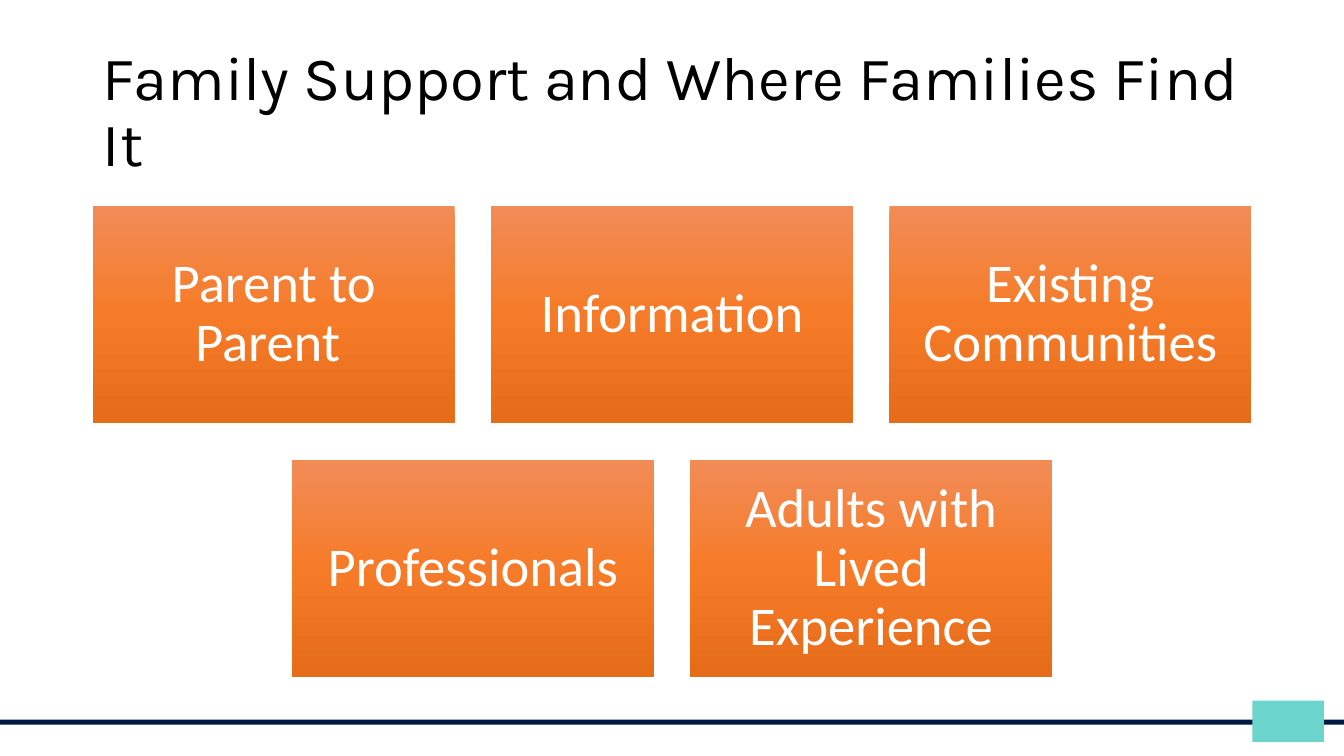
from copy import deepcopy

from pptx import Presentation
from pptx.dml.color import RGBColor
from pptx.enum.shapes import MSO_SHAPE
from pptx.enum.text import MSO_ANCHOR, MSO_AUTO_SIZE, PP_ALIGN
from pptx.oxml.ns import qn
from pptx.util import Inches, Pt

RECTANGLE = MSO_SHAPE.RECTANGLE
MIDDLE = MSO_ANCHOR.MIDDLE
NO_FIT = MSO_AUTO_SIZE.NONE
LEFT, CENTER = PP_ALIGN.LEFT, PP_ALIGN.CENTER

THEME = {
    "title": {"name": "Karla", "size": Pt(44), "color": "000000"},
    "card": {"name": "Calibri", "size": Pt(39), "color": "FFFFFF"},
    "gradient": [(0, "F18C57"), (0.5, "F67B28"), (1, "E56C19")],
    "stripe": "001744",
    "tab": "6BD4CD",
}

SLIDE_WIDTH, SLIDE_HEIGHT = 13.33, 7.5
GRID_LEFT, GRID_TOP = 0.92, 2.04
CARD_WIDTH, CARD_HEIGHT, GAP = 3.59, 2.16, 0.36
COLUMN_STEP, ROW_STEP = CARD_WIDTH + GAP, CARD_HEIGHT + GAP
CARD_ROWS = [
    ["Parent to Parent ", "Information", "Existing Communities"],
    ["Professionals", "Adults with Lived Experience"],
]


def add_rectangle(page, left, top, width, height):
    box = page.shapes.add_shape(
        RECTANGLE, Inches(left), Inches(top), Inches(width), Inches(height)
    )
    box.shadow.inherit = False
    box.line.fill.background()
    return box


def write_text(box, text, style, alignment, inset):
    frame = box.text_frame
    frame_format = {
        "word_wrap": True,
        "auto_size": NO_FIT,
        "vertical_anchor": MIDDLE,
        "margin_left": Inches(inset),
        "margin_right": Inches(inset),
        "margin_top": Inches(inset / 2 if alignment == LEFT else inset),
        "margin_bottom": Inches(inset / 2 if alignment == LEFT else inset),
    }
    for name, value in frame_format.items():
        setattr(frame, name, value)
    para = frame.paragraphs[0]
    para.alignment = alignment
    para.line_spacing = 0.9
    span = para.add_run()
    span.text = text
    for name in ("name", "size"):
        setattr(span.font, name, style[name])
    span.font.color.rgb = RGBColor.from_string(style["color"])


deck = Presentation()
deck.slide_width, deck.slide_height = Inches(SLIDE_WIDTH), Inches(SLIDE_HEIGHT)
page = deck.slides.add_slide(deck.slide_layouts[5])

bars = [
    ("stripe", 0, 7.14, SLIDE_WIDTH, 0.05),
    ("tab", 12.42, 6.95, 0.71, 0.41),
]
for name, left, top, width, height in bars:
    bar = add_rectangle(page, left, top, width, height)
    bar.fill.solid()
    bar.fill.fore_color.rgb = RGBColor.from_string(THEME[name])

title = page.shapes.title
title_place = {"left": GRID_LEFT, "top": 0.4, "width": 11.5, "height": 1.45}
for name, value in title_place.items():
    setattr(title, name, Inches(value))
write_text(title, "Family Support and Where Families Find It", THEME["title"], LEFT, 0.1)

for row, labels in enumerate(CARD_ROWS):
    row_left = GRID_LEFT + (len(CARD_ROWS[0]) - len(labels)) * COLUMN_STEP / 2
    for column, label in enumerate(labels):
        card = add_rectangle(
            page,
            row_left + column * COLUMN_STEP,
            GRID_TOP + row * ROW_STEP,
            CARD_WIDTH,
            CARD_HEIGHT,
        )
        card.fill.gradient()
        card.fill.gradient_angle = 270
        stop_list = card.element.spPr.find(qn("a:gradFill")).find(qn("a:gsLst"))
        stop_list.append(deepcopy(stop_list[-1]))
        for stop, (position, color) in zip(card.fill.gradient_stops, THEME["gradient"]):
            stop.position = position
            stop.color.rgb = RGBColor.from_string(color)
        write_text(card, label, THEME["card"], CENTER, 0.16)

deck.save("out.pptx")
